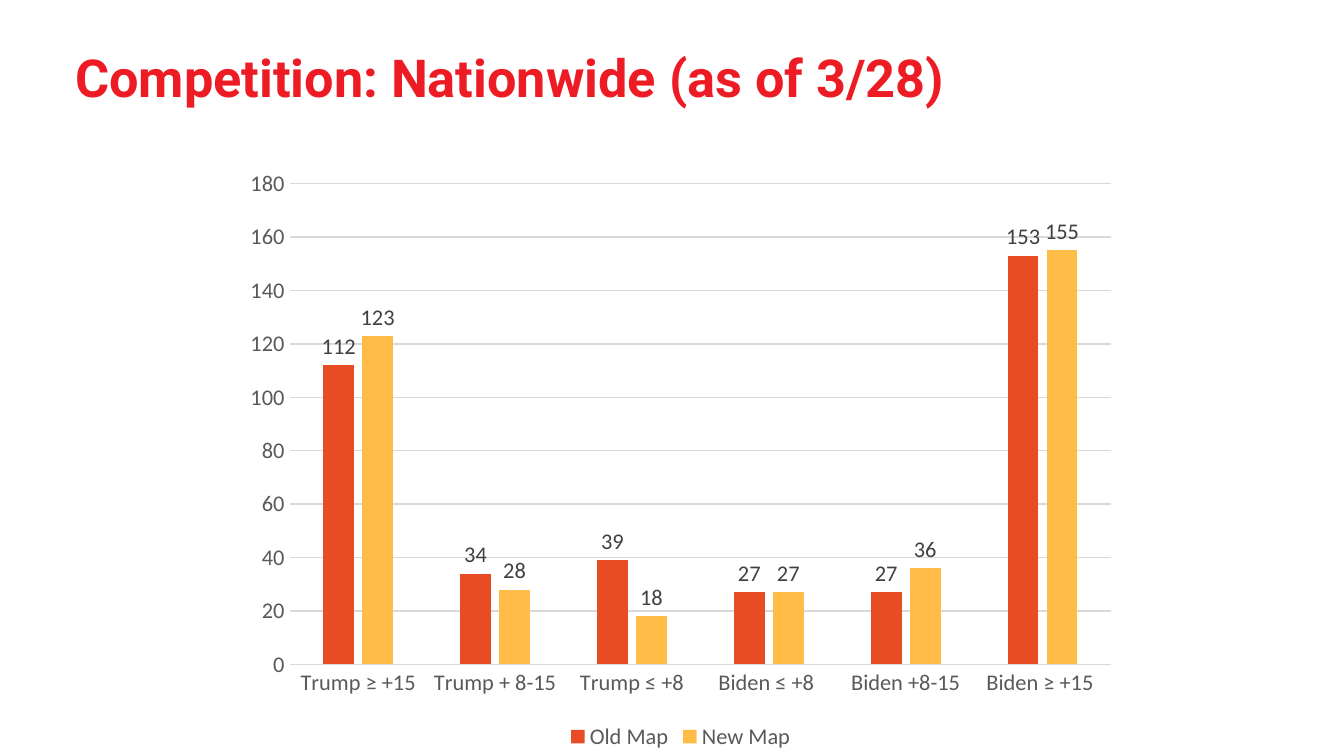
from pptx import Presentation
from pptx.chart.data import CategoryChartData as Data
from pptx.dml.color import RGBColor as RGB
from pptx.enum.chart import XL_CHART_TYPE as Kind, XL_LABEL_POSITION as Spot
from pptx.enum.chart import XL_LEGEND_POSITION as Side, XL_TICK_MARK as Tick
from pptx.enum.text import MSO_ANCHOR as Anchor, MSO_AUTO_SIZE as Fit, PP_ALIGN as Align
from pptx.util import Inches, Pt

TITLE = "Competition: Nationwide (as of 3/28)"
GROUPS = ["Trump ≥ +15", "Trump + 8-15", "Trump ≤ +8",
          "Biden ≤ +8 ", "Biden +8-15", "Biden ≥ +15 "]
SERIES = [
    ("Old Map", (112, 34, 39, 27, 27, 153), "orange"),
    ("New Map", (123, 28, 18, 27, 36, 155), "gold"),
]
COLORS = {"red": "ED1C24", "orange": "E84C22", "gold": "FFBD47",
          "gray": "595959", "dark": "404040", "rule": "D9D9D9", "black": "000000"}


def color(name):
    return RGB.from_string(COLORS[name])


def style(font, size, name, face="Calibri", bold=False):
    font.size = Pt(size)
    font.name = face
    font.bold = bold
    font.color.rgb = color(name)


def rule(line):
    line.color.rgb = color("rule")
    line.width = Pt(0.75)


def add_title(slide):
    title = slide.shapes.title
    title.left, title.top, title.width, title.height = map(Inches, (0.56, 0.43, 7.84, 0.46))
    frame = title.text_frame
    frame.text = TITLE
    frame.word_wrap = True
    frame.auto_size = Fit.NONE
    frame.vertical_anchor = Anchor.TOP
    frame.margin_left = frame.margin_right = frame.margin_top = frame.margin_bottom = 0
    para = frame.paragraphs[0]
    para.alignment = Align.LEFT
    para.line_spacing = 0.8
    style(para.runs[0].font, 28, "red", "Roboto", True)


def add_chart(slide):
    data = Data()
    data.categories = GROUPS
    for name, vals, _ in SERIES:
        data.add_series(name, vals)
    box = map(Inches, (1.73, 1.18, 6.67, 4.44))
    chart = slide.shapes.add_chart(Kind.COLUMN_CLUSTERED, *box, data).chart
    style(chart.font, 10, "black")
    chart.has_title = False
    chart.has_legend = True
    chart.legend.position = Side.BOTTOM
    chart.legend.include_in_layout = False
    style(chart.legend.font, 12, "gray")

    for axis in (chart.category_axis, chart.value_axis):
        axis.major_tick_mark = axis.minor_tick_mark = Tick.NONE
        style(axis.tick_labels.font, 12, "gray")
    rule(chart.category_axis.format.line)
    value = chart.value_axis
    value.minimum_scale, value.maximum_scale, value.major_unit = 0, 180, 20
    value.format.line.fill.background()
    value.has_major_gridlines = True
    rule(value.major_gridlines.format.line)

    plot = chart.plots[0]
    plot.gap_width = 219
    plot.overlap = -27
    plot.vary_by_categories = False
    for bars, (_, _, shade) in zip(plot.series, SERIES):
        bars.format.fill.solid()
        bars.format.fill.fore_color.rgb = color(shade)
        labels = bars.data_labels
        labels.show_value = True
        labels.position = Spot.OUTSIDE_END
        style(labels.font, 12, "dark")


deck = Presentation()
deck.slide_width = Inches(10)
deck.slide_height = deck.slide_width * 9 // 16
slide = deck.slides.add_slide(deck.slide_layouts[5])
add_title(slide)
add_chart(slide)
deck.save("out.pptx")
